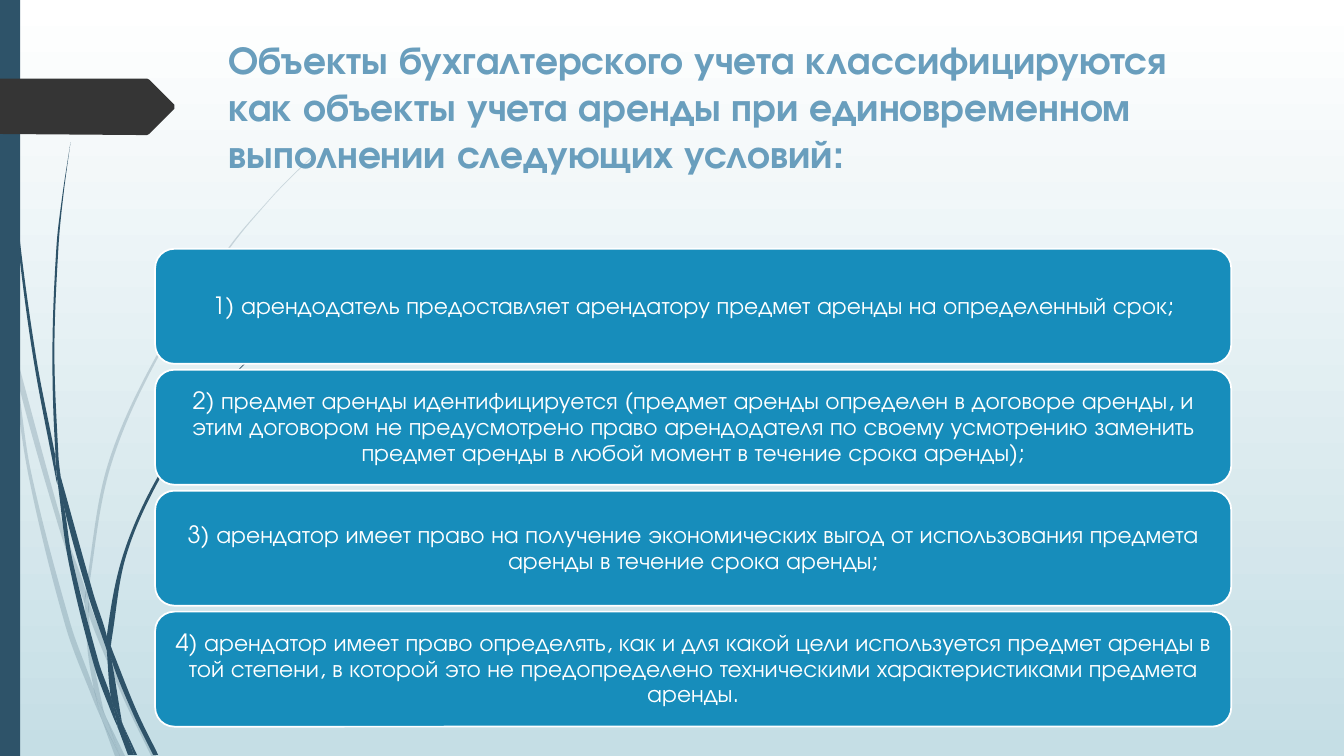
import math
import pptx
import pptx.dml.color
import pptx.enum.shapes
import pptx.enum.text
import pptx.oxml.ns
import pptx.util
from lxml import etree

Cm = pptx.util.Cm
qn = pptx.oxml.ns.qn
SHAPES = pptx.enum.shapes.MSO_SHAPE
ANCHOR = pptx.enum.text.MSO_ANCHOR
ALIGN = pptx.enum.text.PP_ALIGN

FONT = "TeX Gyre Adventor"
NAVY, CHARCOAL, BLUE, TITLE_BLUE, WHITE = "2E5369", "353535", "178DBB", "699EBD", "FFFFFF"
PAGE_WIDTH, PAGE_HEIGHT = 33.87, 19.05
GRID = Cm(2.54) / 100  # unit of the outlines below

TITLE = ("Объекты бухгалтерского учета классифицируются как объекты учета аренды "
         "при единовременном выполнении следующих условий:")
CONDITIONS = [
    "1) арендодатель предоставляет арендатору предмет аренды на определенный срок;",
    "2) предмет аренды идентифицируется (предмет аренды определен в договоре аренды, и этим "
    "договором не предусмотрено право арендодателя по своему усмотрению заменить предмет аренды "
    "в любой момент в течение срока аренды);",
    "3) арендатор имеет право на получение экономических выгод от использования предмета аренды "
    "в течение срока аренды;",
    "4) арендатор имеет право определять, как и для какой цели используется предмет аренды в той "
    "степени, в которой это не предопределено техническими характеристиками предмета аренды.",
]

PALE_GRASS = [
    [(11, 350), (9, 322), (0, 282), (0, 299), (10, 344)],
    [(58, 522), (84, 599), (85, 586), (62, 520), (14, 345), (17, 376)],
    [(92, 607), (88, 596), (88, 610), (123, 694), (150, 750), (155, 750), (127, 692)],
    [(119, 750), (124, 750), (105, 711)],
    [(93, 683), (70, 619), (31, 469), (17, 376), (11, 350), (28, 470), (65, 621), (92, 693),
     (101, 714), (99, 707)],
    [(84, 599), (87, 646), (93, 683), (96, 692), (105, 711), (103, 706), (91, 646), (88, 610)],
    [(88, 584), (110, 462), (160, 349), (229, 245), (268, 198), (290, 175), (312, 154),
     (312, 153), (289, 175), (268, 197), (228, 244), (158, 348), (107, 461), (85, 584),
     (85, 586), (88, 596)],
    [(101, 714), (114, 750), (119, 750)],
    [(88, 608), (88, 596), (85, 586), (84, 599)],
    [(96, 692), (93, 683), (99, 707), (101, 714), (119, 750), (105, 711)],
]
DARK_GRASS = [
    [(7, 110), (17, 233), (33, 355), (56, 477), (57, 481), (55, 457), (55, 453), (36, 355),
     (19, 232), (8, 109), (5, 48), (4, 0), (3, 0), (4, 48)],
    [(88, 592), (106, 645), (106, 631), (93, 590), (60, 472), (64, 505)],
    [(113, 649), (110, 641), (111, 656), (132, 708), (152, 749), (157, 749), (136, 706)],
    [(110, 691), (98, 657), (72, 556), (64, 505), (57, 477), (68, 557), (93, 659), (111, 708),
     (117, 722), (116, 717)],
    [(60, 472), (58, 453), (54, 349), (58, 245), (63, 193), (70, 141), (62, 193), (56, 245),
     (52, 349), (55, 449)],
    [(133, 749), (136, 749), (122, 719)],
    [(57, 477), (64, 505), (60, 472), (55, 449), (55, 453)],
    [(111, 633), (125, 552), (158, 476), (205, 406), (231, 374), (245, 359), (261, 344),
     (260, 344), (245, 358), (231, 373), (204, 405), (156, 474), (122, 551), (106, 631),
     (110, 641)],
    [(117, 722), (127, 749), (131, 749)],
    [(106, 645), (110, 691), (116, 706), (122, 719), (121, 716), (111, 656), (109, 651)],
    [(106, 645), (111, 656), (110, 641), (106, 631)],
    [(116, 706), (110, 691), (116, 717), (117, 722), (130, 749), (133, 749), (122, 719)],
]
MARKER = [(173, 108), (148, 133), (146, 134), (136, 134), (0, 133), (0, 78), (136, 78),
          (146, 78), (148, 79), (173, 104)]


def color(hex_string):
    return pptx.dml.color.RGBColor.from_string(hex_string)


def set_attributes(target, values):
    for name, value in values.items():
        setattr(target, name, value)


def paint(shape, fill, line=None, opacity=100):
    shape.shadow.inherit = False
    shape.fill.solid()
    shape.fill.fore_color.rgb = color(fill)
    if opacity < 100:
        tint = shape.element.spPr.find(".//" + qn("a:srgbClr"))
        etree.SubElement(tint, qn("a:alpha"), val=str(opacity * 1000))
    if line:
        shape.line.color.rgb = color(line)
        shape.line.width = pptx.util.Pt(1.25)
    else:
        shape.line.fill.background()


def write(shape, text, frame_values, para_values, font_values, font_color):
    frame = shape.text_frame
    set_attributes(frame, {"word_wrap": True, **frame_values})
    para = frame.paragraphs[0]
    set_attributes(para, para_values)
    span = para.add_run()
    span.text = text
    set_attributes(span.font, {"name": FONT, **font_values})
    span.font.color.rgb = color(font_color)


def direction(start, end):
    length = math.dist(start, end) or 1
    return (end[0] - start[0]) / length, (end[1] - start[1]) / length


def bend(shape):
    """Turn the straight sides of a closed outline into curves, keeping sharp corners."""
    lines = list(shape.element.iter(qn("a:lnTo")))
    ring = [(int(line[0].get("x")), int(line[0].get("y"))) for line in lines]
    count = len(ring)

    def tangent(index, side):
        before, here, after = ring[index - 1], ring[index], ring[(index + 1) % count]
        arriving, leaving = direction(before, here), direction(here, after)
        if arriving[0] * leaving[0] + arriving[1] * leaving[1] < 0.5:
            return side
        return direction(before, after)

    for index, line in enumerate(lines):
        start, end = ring[index - 1], ring[index]
        side, third = direction(start, end), math.dist(start, end) / 3
        handles = ((start, tangent((index - 1) % count, side), third),
                   (end, tangent(index, side), -third))
        for place, (point, (run, rise), reach) in enumerate(handles):
            handle = etree.Element(qn("a:pt"), x=str(round(point[0] + run * reach)),
                                   y=str(round(point[1] + rise * reach)))
            line.insert(place, handle)
        line.tag = qn("a:cubicBezTo")


def add_outline(page, left, top, outline):
    points = [(round(Cm(left) + x * GRID), round(Cm(top) + y * GRID)) for x, y in outline]
    builder = page.shapes.build_freeform(*points[0])
    builder.add_line_segments(points[1:] + points[:1], close=True)
    return builder.convert_to_shape()


def add_side_decoration(page, left, top, height):
    for opacity, grass in ((20, PALE_GRASS), (100, DARK_GRASS)):
        for outline in grass:
            blade = add_outline(page, left, top, outline)
            bend(blade)
            paint(blade, NAVY, opacity=opacity)
    band = page.shapes.add_shape(SHAPES.RECTANGLE, Cm(left), Cm(top), Cm(0.51), Cm(height))
    paint(band, NAVY)
    paint(add_outline(page, left, top, MARKER), CHARCOAL)


def add_title(page, left, top, width, height):
    title = page.shapes.title
    set_attributes(title, {"left": Cm(left), "top": Cm(top),
                           "width": Cm(width), "height": Cm(height)})
    write(title, TITLE,
          {"vertical_anchor": ANCHOR.TOP, "auto_size": pptx.enum.text.MSO_AUTO_SIZE.NONE},
          {"alignment": ALIGN.LEFT}, {"size": pptx.util.Pt(28), "bold": True}, TITLE_BLUE)
    title.element.getparent().append(title.element)  # bring in front of the grass


def add_conditions(page, left, top, width, height, gap=0.15):
    card_height = (height - gap * (len(CONDITIONS) - 1)) / len(CONDITIONS)
    for index, condition in enumerate(CONDITIONS):
        card = page.shapes.add_shape(
            SHAPES.ROUNDED_RECTANGLE, Cm(left), Cm(top + index * (card_height + gap)),
            Cm(width), Cm(card_height))
        paint(card, BLUE, WHITE)
        write(card, condition,
              {"vertical_anchor": ANCHOR.MIDDLE, "margin_left": Cm(0.18),
               "margin_right": Cm(0.18), "margin_top": Cm(0.12), "margin_bottom": Cm(0.1)},
              {"alignment": ALIGN.CENTER, "line_spacing": 0.9},
              {"size": pptx.util.Pt(17)}, WHITE)


def add_background(page):
    fill = page.background.fill
    fill.gradient()
    fill.gradient_angle = 270
    for stop, (position, shade) in zip(fill.gradient_stops, ((0, WHITE), (1, "C5DEE5"))):
        stop.position = position
        stop.color.rgb = color(shade)


def main():
    deck = pptx.Presentation()
    set_attributes(deck, {"slide_width": Cm(PAGE_WIDTH), "slide_height": Cm(PAGE_HEIGHT)})
    page = deck.slides.add_slide(deck.slide_layouts.get_by_name("Title Only"))
    add_background(page)
    add_side_decoration(page, 0, 0, PAGE_HEIGHT)
    add_title(page, 5.51, 0.76, 25.53, 4.88)
    add_conditions(page, 3.91, 6.27, 27.12, 12.04)
    deck.save("out.pptx")


if __name__ == "__main__":
    main()
